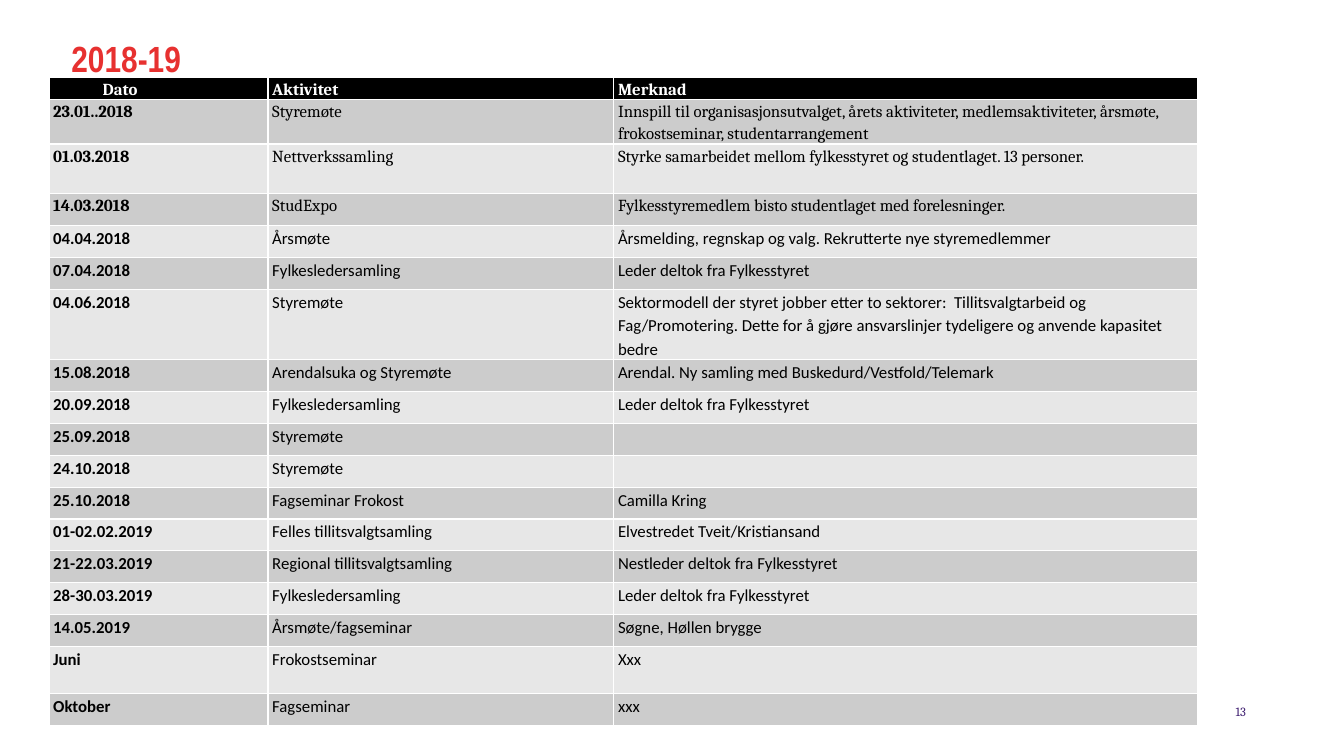
from pptx import Presentation
from pptx import util as u
from pptx.dml.color import RGBColor
from pptx.enum import text

COLORS = {
    "title": "E73130",
    "number": "3F1F71",
    "header": "000000",
    "header_text": "FFFFFF",
    "body_text": "000000",
    "odd_row": "CCCCCC",
    "even_row": "E7E7E7",
}

HEADINGS = ("Dato", "Aktivitet", "Merknad")
ACTIVITIES = [
    ("23.01..2018", "Styremøte", "Innspill til organisasjonsutvalget, årets aktiviteter, medlemsaktiviteter, årsmøte, frokostseminar, studentarrangement"),
    ("01.03.2018", "Nettverkssamling", "Styrke samarbeidet mellom fylkesstyret og studentlaget. 13 personer."),
    ("14.03.2018", "StudExpo", "Fylkesstyremedlem bisto studentlaget med forelesninger."),
    ("04.04.2018", "Årsmøte", "Årsmelding, regnskap og valg. Rekrutterte nye styremedlemmer"),
    ("07.04.2018", "Fylkesledersamling", "Leder deltok fra Fylkesstyret"),
    ("04.06.2018", "Styremøte", "Sektormodell der styret jobber etter to sektorer:  Tillitsvalgtarbeid og Fag/Promotering. Dette for å gjøre ansvarslinjer tydeligere og anvende kapasitet bedre"),
    ("15.08.2018", "Arendalsuka og Styremøte", "Arendal. Ny samling med Buskedurd/Vestfold/Telemark"),
    ("20.09.2018", "Fylkesledersamling", "Leder deltok fra Fylkesstyret"),
    ("25.09.2018", "Styremøte", ""),
    ("24.10.2018", "Styremøte", ""),
    ("25.10.2018", "Fagseminar Frokost", "Camilla Kring"),
    ("01-02.02.2019", "Felles tillitsvalgtsamling", "Elvestredet Tveit/Kristiansand"),
    ("21-22.03.2019", "Regional tillitsvalgtsamling", "Nestleder deltok fra Fylkesstyret"),
    ("28-30.03.2019", "Fylkesledersamling", "Leder deltok fra Fylkesstyret"),
    ("14.05.2019", "Årsmøte/fagseminar", "Søgne, Høllen brygge"),
    ("Juni", "Frokostseminar", "Xxx"),
    ("Oktober", "Fagseminar", "xxx"),
]
COLUMN_WIDTHS = (156.5, 247, 417)
REGULAR_HEIGHT = 22.75
SPECIAL_HEIGHTS = {0: 15.7, 1: 32, 2: 35.5, 6: 50, 16: 34}
SERIF_ROWS = 4


class ActivitySlide:
    def __init__(self, presentation, colors):
        self.colors = colors
        self.slide = presentation.slides.add_slide(presentation.slide_layouts[5])

    def apply(self, target, values):
        for name, value in values.items():
            setattr(target, name, value)

    def add_text(self, paragraph, content, color, font, layout):
        self.apply(paragraph, layout)
        run = paragraph.add_run()
        run.text = content
        self.apply(run.font, font)
        run.font.color.rgb = RGBColor.from_string(self.colors[color])

    def frame(self, shape, box, anchor):
        places = zip(("left", "top", "width", "height"), map(u.Pt, box))
        self.apply(shape, dict(places))
        self.apply(shape.text_frame, {
            "margin_left": 0, "margin_top": 0, "margin_right": 0, "margin_bottom": 0,
            "word_wrap": True, "auto_size": text.MSO_AUTO_SIZE.NONE,
            "vertical_anchor": anchor,
        })
        return shape.text_frame.paragraphs[0]

    def title(self, content, box):
        paragraph = self.frame(self.slide.shapes.title, box, text.MSO_ANCHOR.TOP)
        self.add_text(paragraph, content, "title",
                      {"name": "Arial Narrow", "size": u.Pt(26), "bold": True},
                      {"alignment": text.PP_ALIGN.LEFT, "line_spacing": u.Pt(29)})

    def page_number(self, content, box):
        shape = self.slide.shapes.add_textbox(*map(u.Pt, box))
        paragraph = self.frame(shape, box, text.MSO_ANCHOR.MIDDLE)
        self.add_text(paragraph, content, "number",
                      {"name": "Cambria", "size": u.Pt(9)},
                      {"alignment": text.PP_ALIGN.RIGHT})

    def cell(self, cell, content, fill, color, font):
        self.apply(cell, {"margin_left": u.Pt(3), "margin_right": u.Pt(3),
                          "margin_top": 0, "margin_bottom": 0})
        cell.fill.solid()
        cell.fill.fore_color.rgb = RGBColor.from_string(self.colors[fill])
        if content:
            self.add_text(cell.text_frame.paragraphs[0], content, color, font,
                          {"line_spacing": 1.15})

    def table(self, rows, left, top):
        heights = [SPECIAL_HEIGHTS.get(i, REGULAR_HEIGHT) for i in range(len(rows))]
        box = (left, top, sum(COLUMN_WIDTHS), sum(heights))
        table = self.slide.shapes.add_table(
            len(rows), len(COLUMN_WIDTHS), *map(u.Pt, box)).table
        for column, width in zip(table.columns, COLUMN_WIDTHS):
            column.width = u.Pt(width)
        for i, values in enumerate(rows):
            table.rows[i].height = u.Pt(heights[i])
            fill = "header" if i == 0 else "odd_row" if i % 2 else "even_row"
            color = "header_text" if i == 0 else "body_text"
            for j, content in enumerate(values):
                font = {"name": "Cambria" if i < SERIF_ROWS else "Calibri",
                        "size": u.Pt(12), "bold": i == 0 or j == 0}
                self.cell(table.cell(i, j), content, fill, color, font)
        date_heading = table.cell(0, 0).text_frame.paragraphs[0]
        date_heading._p.get_or_add_pPr().set("indent", str(u.Pt(35.4)))


def main():
    presentation = Presentation()
    presentation.slide_width = u.Pt(960)
    presentation.slide_height = u.Pt(540)
    slide = ActivitySlide(presentation, COLORS)
    slide.title("2018-19", (51, 28, 621, 58))
    slide.page_number("13", (674, 503, 216, 11))
    slide.table([HEADINGS, *ACTIVITIES], 35, 55)
    presentation.save("out.pptx")


if __name__ == "__main__":
    main()
